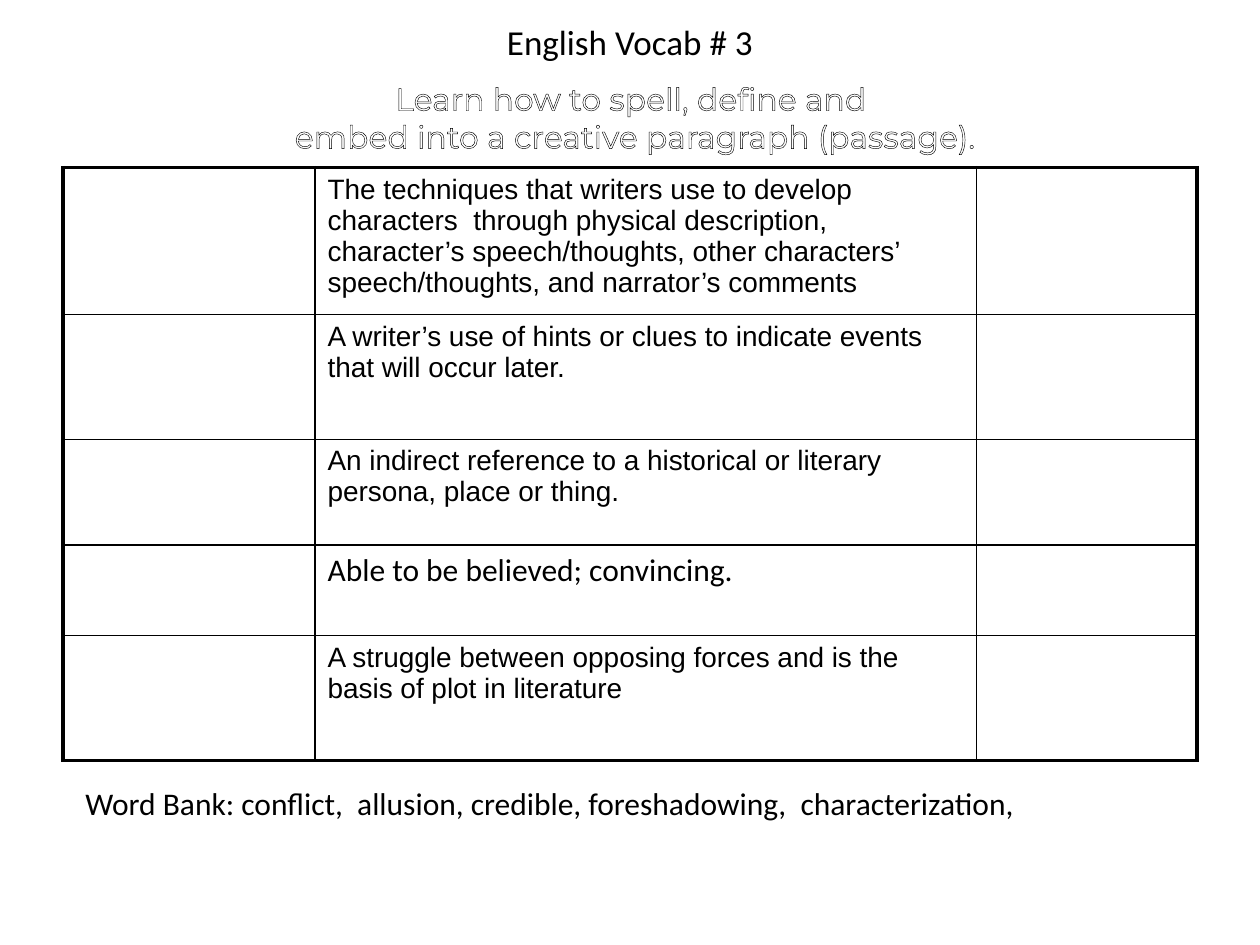
from pptx import Presentation
from pptx import util as u
from pptx.dml.color import RGBColor
from pptx.enum import text
from pptx.oxml import ns
from lxml import etree

COLORS = {"ink": "000000", "paper": "FFFFFF"}
THIN, THICK = 1, 2.25
COLUMNS = [2, 5.25, 1.75]
DEFINITIONS = [
    (1, "Arial", 16, "The techniques that writers use to develop characters  through "
     "physical description, character’s speech/thoughts, other characters’ "
     "speech/thoughts, and narrator’s comments"),
    (0.99, "Arial", 16, "A writer’s use of hints or clues to indicate events "
     "that will occur later."),
    (0.84, "Arial", 16, "An indirect reference to a historical or literary persona, "
     "place or thing."),
    (0.72, "Calibri", 18, "Able to be believed; convincing."),
    (0.99, "Arial", 16, "A struggle between opposing forces and is the basis of plot "
     "in literature"),
]


def add_span(para, words, font, size, color="ink"):
    span = para.add_run()
    span.text = words
    span.font.name = font
    span.font.size = u.Pt(size)
    span.font.color.rgb = RGBColor.from_string(COLORS[color])
    return span


def add_line(parent, tag, width, position):
    line = etree.Element(ns.qn(tag), w=str(int(u.Pt(width))))
    fill = etree.SubElement(line, ns.qn("a:solidFill"))
    etree.SubElement(fill, ns.qn("a:srgbClr"), val=COLORS["ink"])
    parent.insert(position, line)


def add_title(page, left, top, width, height):
    box = page.shapes.title
    box.left, box.top, box.width, box.height = left, top, width, height
    frame = box.text_frame
    frame.vertical_anchor = text.MSO_ANCHOR.TOP
    frame.margin_top = u.Inches(0.16)
    para = frame.paragraphs[0]
    para.alignment = text.PP_ALIGN.CENTER
    add_span(para, "English Vocab # 3", "Calibri", 20)


def add_instructions(page, left, top, width, height):
    frame = page.shapes.add_textbox(left, top, width, height).text_frame
    frame.word_wrap = False
    lines = ["Learn how to spell, define and ",
             "embed into a creative paragraph (passage)."]
    for index, words in enumerate(lines):
        para = frame.add_paragraph() if index else frame.paragraphs[0]
        para.alignment = text.PP_ALIGN.CENTER
        span = add_span(para, words, "Montserrat", 18, "paper")
        add_line(span.font._element, "a:ln", 0.75, 0)


def add_definitions(page, left, top, width, height):
    frame = page.shapes.add_table(len(DEFINITIONS), len(COLUMNS), left, top, width, height)
    table = frame.table
    table.first_row = table.horz_banding = False
    for column, size in zip(table.columns, COLUMNS):
        column.width = u.Inches(size)
    last_row, last_column = len(DEFINITIONS) - 1, len(COLUMNS) - 1
    for r, (row_height, font, size, words) in enumerate(DEFINITIONS):
        table.rows[r].height = u.Inches(row_height)
        for c in range(len(COLUMNS)):
            cell = table.cell(r, c)
            outer = {"a:lnL": c == 0, "a:lnR": c == last_column,
                     "a:lnT": r == 0, "a:lnB": r == last_row}
            properties = cell._tc.get_or_add_tcPr()
            for position, (tag, is_outer) in enumerate(outer.items()):
                add_line(properties, tag, THICK if is_outer else THIN, position)
            cell.fill.background()
        add_span(table.cell(r, 1).text_frame.paragraphs[0], words, font, size)


def add_word_bank(page, left, top, width, height):
    frame = page.shapes.add_textbox(left, top, width, height).text_frame
    frame.word_wrap = True
    frame.auto_size = text.MSO_AUTO_SIZE.SHAPE_TO_FIT_TEXT
    add_span(frame.paragraphs[0], "Word Bank: conflict,  allusion, credible, "
             "foreshadowing,  characterization,", "Calibri", 18)


def main():
    deck = Presentation()
    deck.slide_width, deck.slide_height = u.Inches(10), u.Inches(7.5)
    page = deck.slides.add_slide(deck.slide_layouts[5])
    regions = [
        (add_title, (0.5, 0, 9, 0.95)),
        (add_instructions, (1, 0.58, 8.08, 0.58)),
        (add_definitions, (0.5, 1.33, 9, 4.54)),
        (add_word_bank, (0.58, 6.17, 8.83, 0.4)),
    ]
    for build, area in regions:
        build(page, *map(u.Inches, area))
    deck.save("out.pptx")


if __name__ == "__main__":
    main()
